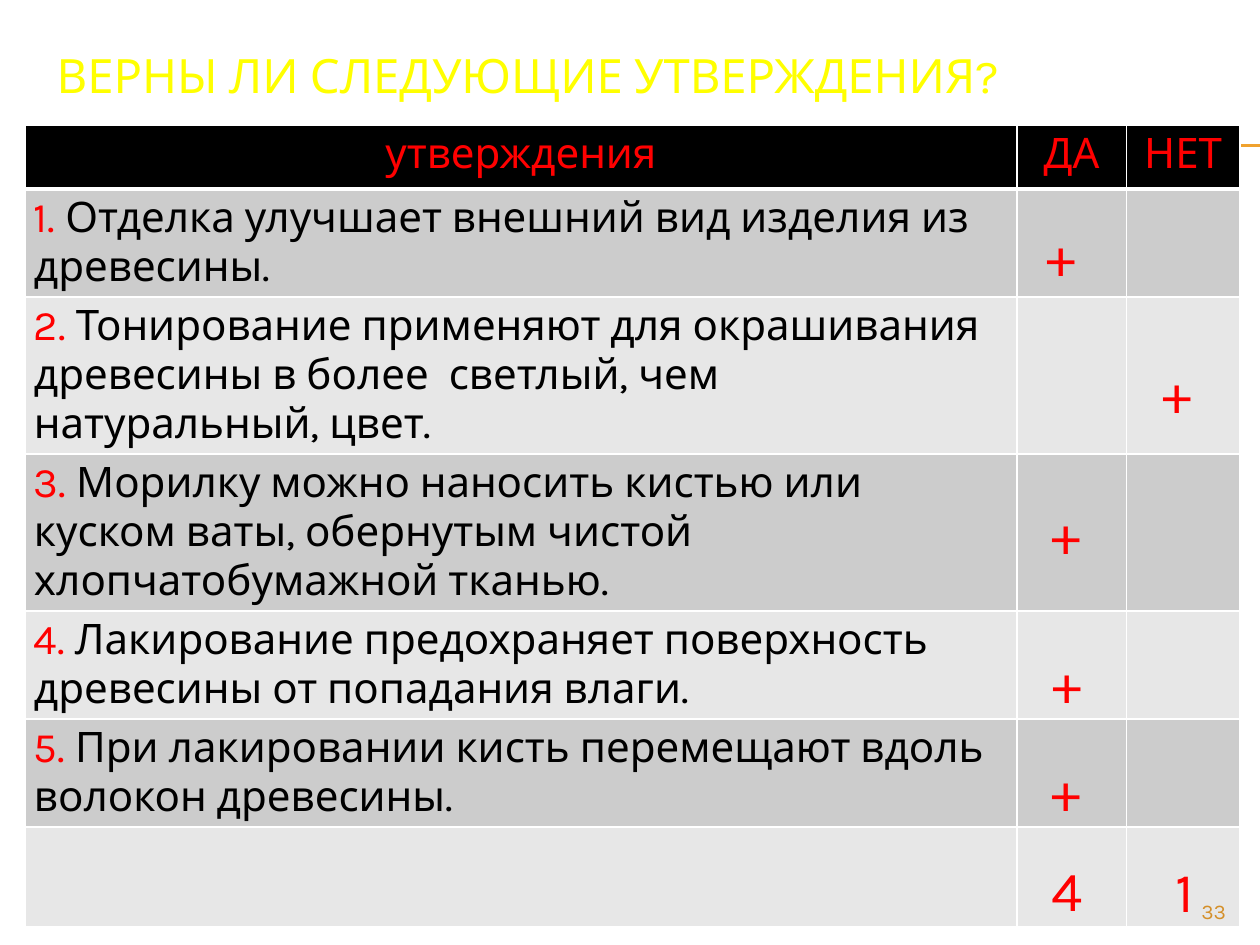
import pptx
import pptx.util
import pptx.dml.color
import pptx.enum.shapes
import pptx.enum.text
import pptx.oxml
import pptx.oxml.ns
from lxml import etree

COLORS = {"title": "FFFF00", "accent": "FF0000", "text": "000000", "head": "000000",
          "odd": "CCCCCC", "even": "E7E7E7", "border": "FFFFFF",
          "rule": "F0A22E", "number": "D48F29"}
FONT = "Karla"
COLS = [7.87, 0.87, 0.9]
ROWS = [0.51, 0.82, 1.19, 1.19, 0.82, 0.82, 0.79]
HEADINGS = ["утверждения", "ДА", "НЕТ"]
STATEMENTS = [
    "Отделка улучшает внешний вид изделия из древесины.",
    "Тонирование применяют для окрашивания древесины в более  светлый, чем натуральный, цвет.",
    "Морилку можно наносить кистью или куском ваты, обернутым чистой хлопчатобумажной тканью.",
    "Лакирование предохраняет поверхность древесины от попадания влаги.",
    "При лакировании кисть перемещают вдоль волокон древесины.",
]
# Answer text, left and top within the table
ANSWERS = [("+", 7.99, 0.71), ("+", 8.91, 1.8), ("+", 8.03, 2.92), ("+", 8.04, 4.1),
           ("+", 8.03, 4.96), ("4", 8.04, 5.75), ("1", 8.97, 5.76)]
ALIGN = pptx.enum.text.PP_ALIGN
inch = pptx.util.Inches


def rgb(name):
    return pptx.dml.color.RGBColor.from_string(COLORS[name])


def style(font, size, color):
    font.name, font.size, font.bold = FONT, pptx.util.Pt(size), False
    font.color.rgb = rgb(color)


def add_rules(s, left, right, tops):
    for top in tops:
        line = s.shapes.add_connector(pptx.enum.shapes.MSO_CONNECTOR.STRAIGHT,
                                      inch(left), inch(top), inch(right), inch(top))
        line.line.color.rgb = rgb("rule")
        line.line.width = pptx.util.Pt(0.75)
        etree.SubElement(line._element.spPr, pptx.oxml.ns.qn("a:effectLst"))


def add_title(s, box, text):
    sp = s.shapes.title
    sp.left, sp.top, sp.width, sp.height = map(inch, box)
    tf = sp.text_frame
    tf.text = text
    tf.vertical_anchor = pptx.enum.text.MSO_ANCHOR.MIDDLE
    p = tf.paragraphs[0]
    p.alignment = ALIGN.LEFT
    style(p.font, 27, "title")


def format_cell(cell, fill, bottom):
    cell.margin_left = cell.margin_right = inch(0.07)
    cell.margin_top = cell.margin_bottom = inch(0.04)
    tcPr = cell._tc.get_or_add_tcPr()
    for side in ("L", "R", "T", "B"):
        width = pptx.util.Pt(bottom if side == "B" else 1)
        tcPr.append(pptx.oxml.parse_xml(
            f'<a:ln{side} {pptx.oxml.ns.nsdecls("a")} w="{width}"><a:solidFill>'
            f'<a:srgbClr val="{COLORS["border"]}"/></a:solidFill></a:ln{side}>'))
    cell.fill.solid()
    cell.fill.fore_color.rgb = rgb(fill)


def add_statements(s, left, top):
    table = s.shapes.add_table(len(ROWS), len(COLS), inch(left), inch(top),
                               inch(sum(COLS)), inch(sum(ROWS))).table
    for column, width in zip(table.columns, COLS):
        column.width = inch(width)
    for i, height in enumerate(ROWS):
        table.rows[i].height = inch(height)
        fill = "head" if i == 0 else "odd" if i % 2 else "even"
        for cell in table.rows[i].cells:
            format_cell(cell, fill, 3 if i == 0 else 1)
    for cell, heading in zip(table.rows[0].cells, HEADINGS):
        p = cell.text_frame.paragraphs[0]
        p.text, p.alignment = heading, ALIGN.CENTER
        style(p.font, 24, "accent")
    for i, statement in enumerate(STATEMENTS, 1):
        p = table.cell(i, 0).text_frame.paragraphs[0]
        for text, color in ((f"{i}. ", "accent"), (statement, "text")):
            r = p.add_run()
            r.text = text
            style(r.font, 24, color)


def add_label(s, box, text, size, color, align, wrap):
    tf = s.shapes.add_textbox(*map(inch, box)).text_frame
    tf.word_wrap = wrap
    p = tf.paragraphs[0]
    p.text, p.alignment = text, align
    style(p.font, size, color)


def add_answers(s, left, top):
    for text, x, y in ANSWERS:
        add_label(s, (left + x, top + y, 0.46, 0.64), text, 32, "accent",
                  ALIGN.CENTER, False)


def main():
    prs = pptx.Presentation()
    prs.slide_width, prs.slide_height = inch(10), inch(7.5)
    s = prs.slides.add_slide(prs.slide_layouts[5])
    # Header
    add_rules(s, 0.56, 10, (1.15, 1.16))
    add_title(s, (0.35, 0.13, 9.5, 0.92), "ВЕРНЫ ЛИ СЛЕДУЮЩИЕ УТВЕРЖДЕНИЯ?")
    # Statements with answers and totals
    add_statements(s, 0.2, 0.99)
    add_answers(s, 0.2, 0.99)
    # Slide number
    add_label(s, (9, 7.08, 0.83, 0.27), "33", 12, "number", ALIGN.RIGHT, True)
    prs.save("out.pptx")


if __name__ == "__main__":
    main()
